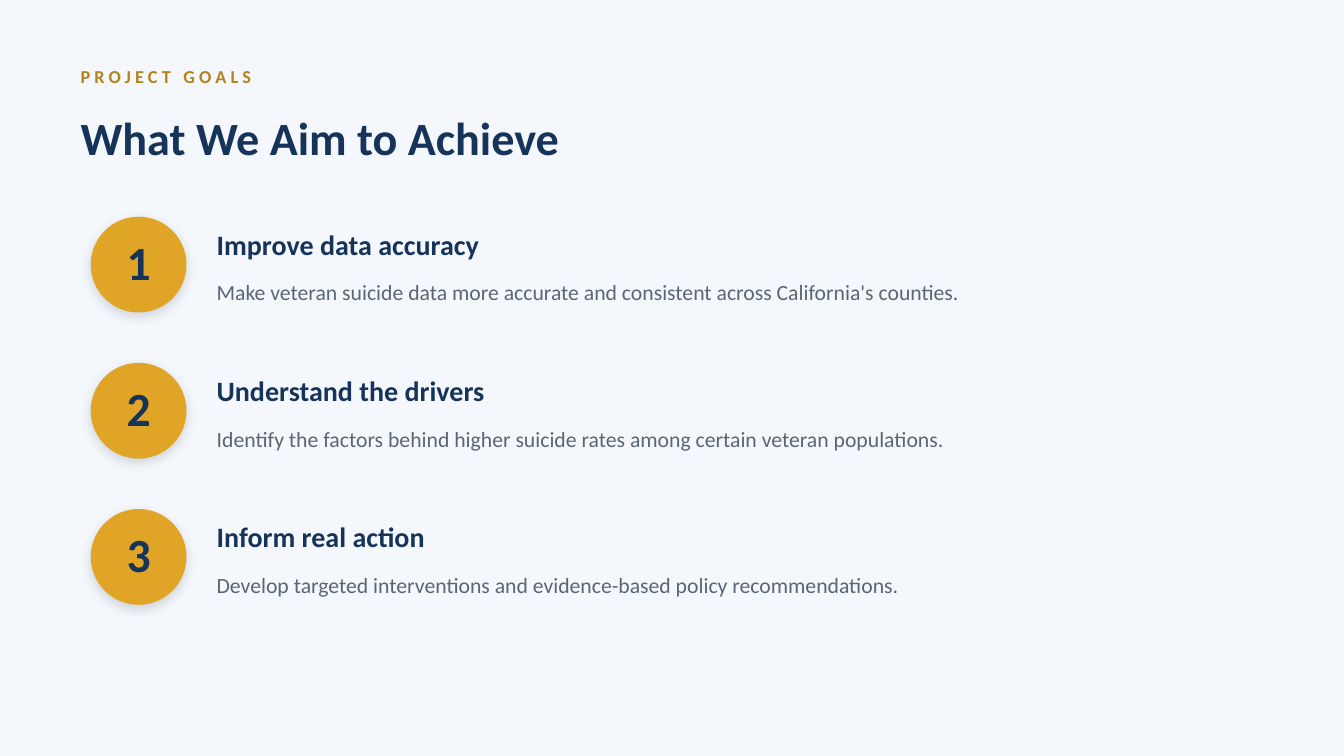
"""Build the project goals slide with three numbered goals."""
from dataclasses import dataclass

import pptx
import pptx.dml.color
import pptx.enum.shapes
import pptx.enum.text
import pptx.oxml
import pptx.oxml.ns
import pptx.util

Pt = pptx.util.Pt
RGB = pptx.dml.color.RGBColor.from_string
ALIGN = pptx.enum.text.PP_ALIGN


@dataclass(frozen=True)
class Theme:
    font: str = "Calibri"
    background: str = "F4F7FB"
    navy: str = "16335A"
    gold: str = "E0A526"
    dark_gold: str = "B5821C"
    grey: str = "5B6675"
    shadow: str = "1A2A40"
    eyebrow_size: float = 13
    title_size: float = 33
    number_size: float = 34
    heading_size: float = 20
    detail_size: float = 15.5


@dataclass(frozen=True)
class Box:
    left: float
    top: float
    width: float
    height: float

    def lengths(self) -> list[int]:
        return [Pt(v) for v in (self.left, self.top, self.width, self.height)]


@dataclass(frozen=True)
class Goal:
    heading: str
    detail: str


THEME = Theme()
GOALS = [
    Goal("Improve data accuracy",
         "Make veteran suicide data more accurate and consistent across California's counties."),
    Goal("Understand the drivers",
         "Identify the factors behind higher suicide rates among certain veteran populations."),
    Goal("Inform real action",
         "Develop targeted interventions and evidence-based policy recommendations."),
]
GOALS_TOP, GOAL_PITCH = 154.8, 104.4
CIRCLE_LEFT, CIRCLE_SIZE = 64.8, 68.4
TEXT_LEFT, TEXT_WIDTH, TEXT_HEIGHT = 154.8, 741.6, 36
HEADING_OFFSET, DETAIL_OFFSET = 1.44, 36
NUMBER_LIFT = 4.32


def write(sp, text: str, size: float, color: str, bold: bool = True,
          align=ALIGN.LEFT, spacing: float = 0) -> None:
    """Fill a shape with one styled, vertically centred paragraph."""
    tf = sp.text_frame
    tf.word_wrap = True
    tf.auto_size = pptx.enum.text.MSO_AUTO_SIZE.NONE
    tf.vertical_anchor = pptx.enum.text.MSO_ANCHOR.MIDDLE
    tf.margin_left = tf.margin_right = tf.margin_top = tf.margin_bottom = 0
    p = tf.paragraphs[0]
    p.text = text
    p.alignment = align
    p.font.name = THEME.font
    p.font.size = Pt(size)
    p.font.bold = bold
    p.font.color.rgb = RGB(color)
    if spacing:
        p._p.pPr.find(pptx.oxml.ns.qn("a:defRPr")).set("spc", str(round(spacing * 100)))


def add_text(s, box: Box, text: str, size: float, color: str,
             bold: bool = True, spacing: float = 0) -> None:
    """Add a left-aligned text box."""
    write(s.shapes.add_textbox(*box.lengths()), text, size, color, bold, spacing=spacing)


def add_soft_shadow(sp) -> None:
    """Give a shape a faint shadow falling straight down."""
    sp.shadow.inherit = False
    effects = sp._element.spPr.find(pptx.oxml.ns.qn("a:effectLst"))
    effects.append(pptx.oxml.parse_xml(
        f'<a:outerShdw {pptx.oxml.ns.nsdecls("a")} blurRad="{Pt(8)}" dist="{Pt(3)}" '
        f'dir="5400000" algn="bl" rotWithShape="0"><a:srgbClr val="{THEME.shadow}">'
        '<a:alpha val="16000"/></a:srgbClr></a:outerShdw>'))


def add_goal(s, index: int, goal: Goal) -> None:
    """Draw one numbered circle with its heading and detail."""
    top = GOALS_TOP + index * GOAL_PITCH
    circle = Box(CIRCLE_LEFT, top, CIRCLE_SIZE, CIRCLE_SIZE)
    sp = s.shapes.add_shape(pptx.enum.shapes.MSO_SHAPE.OVAL, *circle.lengths())
    sp.fill.solid()
    sp.fill.fore_color.rgb = RGB(THEME.gold)
    sp.line.fill.background()
    add_soft_shadow(sp)
    write(sp, str(index + 1), THEME.number_size, THEME.navy, align=ALIGN.CENTER)
    sp.text_frame.margin_bottom = Pt(NUMBER_LIFT)
    add_text(s, Box(TEXT_LEFT, top + HEADING_OFFSET, TEXT_WIDTH, TEXT_HEIGHT),
             goal.heading, THEME.heading_size, THEME.navy)
    add_text(s, Box(TEXT_LEFT, top + DETAIL_OFFSET, TEXT_WIDTH, TEXT_HEIGHT),
             goal.detail, THEME.detail_size, THEME.grey, bold=False)


def main() -> None:
    """Create and save the presentation."""
    prs = pptx.Presentation()
    prs.slide_width, prs.slide_height = Pt(960), Pt(540)
    s = prs.slides.add_slide(prs.slide_layouts[5])
    s.background.fill.solid()
    s.background.fill.fore_color.rgb = RGB(THEME.background)
    add_text(s, Box(57.6, 41.76, 842.4, 25.2), "PROJECT GOALS",
             THEME.eyebrow_size, THEME.dark_gold, spacing=3)
    title = s.shapes.title
    title.left, title.top, title.width, title.height = Box(57.6, 69.12, 842.4, 57.6).lengths()
    write(title, "What We Aim to Achieve", THEME.title_size, THEME.navy)
    for index, goal in enumerate(GOALS):
        add_goal(s, index, goal)
    prs.save("out.pptx")


if __name__ == "__main__":
    main()
